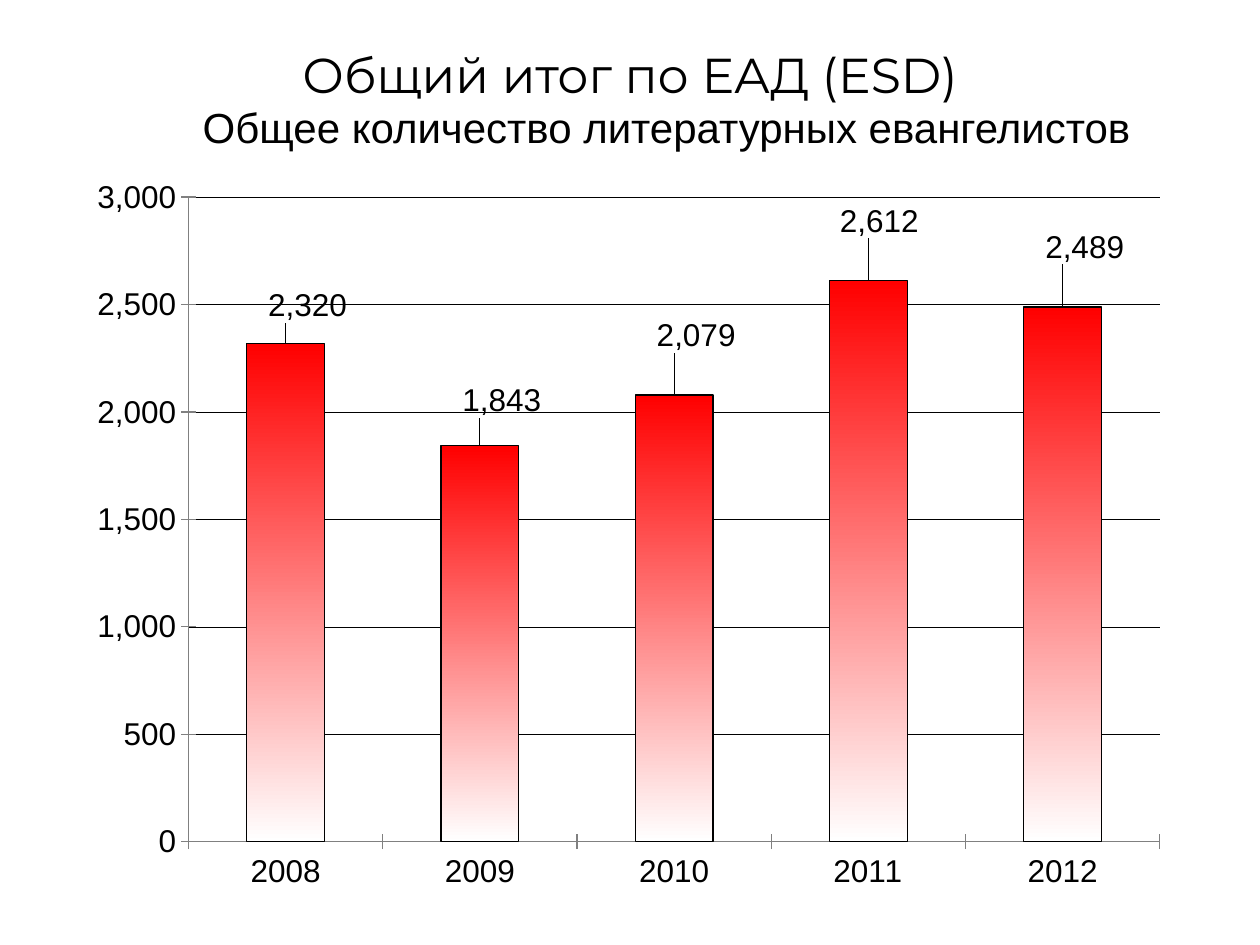
from pptx import Presentation
from pptx.chart.data import CategoryChartData
from pptx.dml.color import RGBColor
from pptx.enum.chart import XL_CHART_TYPE as ChartType
from pptx.enum.chart import XL_LABEL_POSITION as LabelPosition
from pptx.enum.chart import XL_TICK_MARK as TickMark
from pptx.enum.text import MSO_ANCHOR as Anchor
from pptx.enum.text import PP_ALIGN as Align
from pptx.oxml import parse_xml
from pptx.oxml.ns import nsdecls
from pptx.util import Inches, Pt

COLORS = {name: RGBColor.from_string(value) for name, value in {
    "black": "000000", "red": "FF0000", "white": "FFFFFF", "gray": "808080",
}.items()}
NUMBER_FORMAT = "#,##0"

# year, literature evangelists, label shift as a fraction of the chart size
YEARS = [
    ("2008", 2320, 0.02, -0.02),
    ("2009", 1843, 0.02, -0.03),
    ("2010", 2079, 0.02, -0.05),
    ("2011", 2612, 0.01, -0.05),
    ("2012", 2489, 0.02, -0.05),
]


def add_text(page, text, *, left, top, width, height, size, font):
    box = page.shapes.add_textbox(Inches(left), Inches(top), Inches(width), Inches(height))
    frame = box.text_frame
    frame.word_wrap = True
    frame.vertical_anchor = Anchor.TOP
    para = frame.paragraphs[0]
    para.alignment = Align.CENTER
    span = para.add_run()
    span.text = text
    span.font.name = font
    span.font.size = Pt(size)
    span.font.color.rgb = COLORS["black"]


def manual_layout(**values):
    """Return a c:layout element holding the given manual layout values."""
    parts = "".join(f'<c:{tag} val="{value}"/>' for tag, value in values.items())
    return parse_xml(f'<c:layout {nsdecls("c")}><c:manualLayout>{parts}'
                     '</c:manualLayout></c:layout>')


deck = Presentation()
deck.slide_width, deck.slide_height = Inches(10), Inches(7.5)
page = deck.slides.add_slide(deck.slide_layouts[6])

# Chart
data = CategoryChartData(number_format=NUMBER_FORMAT)
data.categories = [year for year, *_ in YEARS]
data.add_series("Series 1", [count for _, count, *_ in YEARS])
chart = page.shapes.add_chart(
    ChartType.COLUMN_CLUSTERED, Inches(0.62), Inches(1.33), Inches(8.76), Inches(5.88), data
).chart
chart.has_legend = False
chart.has_title = False
chart.font.name = "Arial"
chart.font.size = Pt(18)
chart.font.color.rgb = COLORS["black"]

plot_area = chart.plots[0]._element.getparent()
for old_layout in plot_area.findall("{*}layout"):
    plot_area.remove(old_layout)
plot_area.insert(0, manual_layout(layoutTarget="inner", xMode="edge", yMode="edge",
                                  x=0.1, y=0.04, w=0.88, h=0.87))

for axis in (chart.category_axis, chart.value_axis):
    axis.major_tick_mark = TickMark.CROSS
    axis.minor_tick_mark = TickMark.NONE
    axis.format.line.color.rgb = COLORS["gray"]
    axis.format.line.width = Pt(0.75)

counts = chart.value_axis
counts.minimum_scale, counts.maximum_scale, counts.major_unit = 0, 3000, 500
counts.tick_labels.number_format = NUMBER_FORMAT
counts.tick_labels.number_format_is_linked = False
counts.has_major_gridlines = True
counts.major_gridlines.format.line.color.rgb = COLORS["black"]
counts.major_gridlines.format.line.width = Pt(0.25)

# Columns
plot = chart.plots[0]
plot.vary_by_categories = False
plot.gap_width = 150
columns = plot.series[0]
fill = columns.format.fill
fill.gradient()
fill.gradient_angle = 270
for stop, color in zip(fill.gradient_stops, ("red", "white")):
    stop.color.rgb = COLORS[color]
columns.format.line.color.rgb = COLORS["black"]
columns.format.line.width = Pt(0.75)

# Value labels, each shifted from its place above the column
labels = columns.data_labels
labels.show_value = True
labels.number_format = NUMBER_FORMAT
labels.number_format_is_linked = False
labels.position = LabelPosition.OUTSIDE_END
for index in range(len(YEARS)):
    columns.points[index].data_label.position = LabelPosition.OUTSIDE_END
for label, (_, _, shift_x, shift_y) in zip(columns._element.xpath(".//c:dLbl"), YEARS):
    label.insert(1, manual_layout(x=shift_x, y=shift_y))

# Headings
add_text(page, "Общий итог по ЕАД (ESD)", left=0.5, top=0.3, width=9, height=1.25,
         size=28, font="Montserrat")
add_text(page, "Общее количество литературных евангелистов", left=1, top=0.76,
         width=8.58, height=0.5, size=24, font="Arial")

deck.save("out.pptx")
